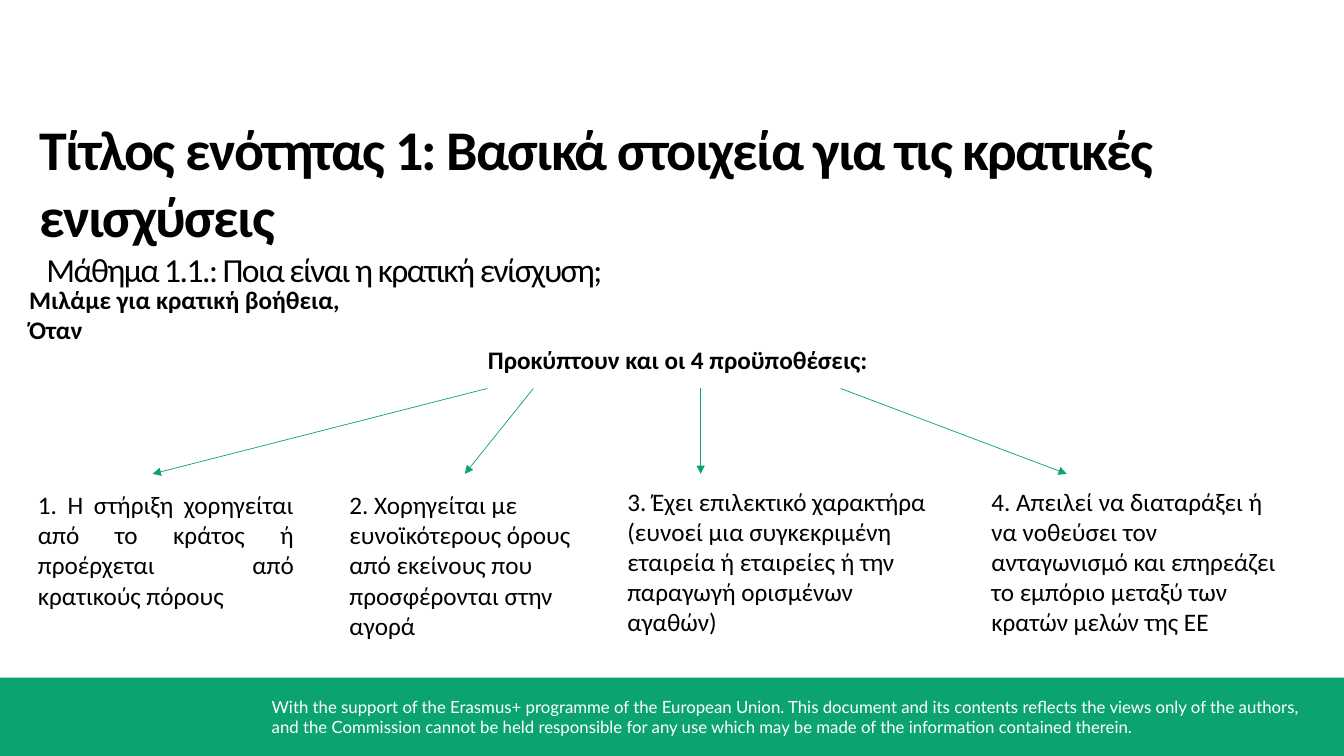
import pptx
import pptx.dml.color
import pptx.enum.shapes
import pptx.enum.text
import pptx.oxml
import pptx.oxml.ns
import pptx.util

COLOURS = {"green": "0CA373", "black": "000000", "white": "FFFFFF"}
ALIGN = pptx.enum.text.PP_ALIGN


class SlideBuilder:
    """Draws styled elements on one slide, with lengths in points."""

    def __init__(self, slide, font_name):
        self.slide = slide
        self.font_name = font_name

    def colour(self, name):
        return pptx.dml.color.RGBColor.from_string(COLOURS[name])

    def lengths(self, *values):
        return [pptx.util.Pt(value) for value in values]

    def band(self, left, top, width, height):
        shape = self.slide.shapes.add_shape(
            pptx.enum.shapes.MSO_SHAPE.RECTANGLE, *self.lengths(left, top, width, height))
        shape.shadow.inherit = False
        shape.fill.solid()
        shape.fill.fore_color.rgb = self.colour("green")
        shape.line.fill.background()

    def text_box(self, left, top, width, height):
        shape = self.slide.shapes.add_textbox(*self.lengths(left, top, width, height))
        shape.text_frame.word_wrap = True
        return shape.text_frame

    def add_text(self, frame, text, size=18, bold=False, align=ALIGN.LEFT,
                 colour="black", font_name=None, indent=0, spacing=0):
        paragraph = frame.paragraphs[0]
        if paragraph.runs:
            paragraph = frame.add_paragraph()
        paragraph.add_run().text = text
        paragraph.alignment = align
        if indent:
            paragraph._p.get_or_add_pPr().set("marL", str(pptx.util.Pt(indent)))
        font = paragraph.font
        font.name = font_name or self.font_name
        font.size = pptx.util.Pt(size)
        font.bold = bold
        font.color.rgb = self.colour(colour)
        if spacing:
            font._rPr.set("spc", str(round(spacing * 100)))

    def arrow(self, *ends):
        connector = self.slide.shapes.add_connector(
            pptx.enum.shapes.MSO_CONNECTOR.STRAIGHT, *self.lengths(*ends))
        connector.line.color.rgb = self.colour("green")
        connector.line.width = pptx.util.Pt(0.5)
        namespace = pptx.oxml.ns.nsdecls("a")
        line = connector.line._get_or_add_ln()
        line.append(pptx.oxml.parse_xml(f'<a:tailEnd {namespace} type="triangle"/>'))
        connector._element.spPr.append(pptx.oxml.parse_xml(f"<a:effectLst {namespace}/>"))


def main():
    presentation = pptx.Presentation()
    presentation.slide_width = pptx.util.Pt(960)
    presentation.slide_height = pptx.util.Pt(540)
    slide = presentation.slides.add_slide(presentation.slide_layouts[6])
    builder = SlideBuilder(slide, "Calibri")

    builder.band(0, 484, 960, 56)
    footer = builder.text_box(187, 494, 750, 36)
    builder.add_text(
        footer,
        "With the support of the Erasmus+ programme of the European Union. "
        "This document and its contents reflects the views only of the authors, "
        "and the Commission cannot be held responsible for any use which may be "
        "made of the information contained therein.",
        size=12, colour="white", font_name="Lato")

    title = builder.text_box(20, 78, 852, 134)
    builder.add_text(title, "Τίτλος ενότητας 1: Βασικά στοιχεία για τις κρατικές ενισχύσεις",
                     size=40, bold=True, indent=1, spacing=-1.1)
    builder.add_text(title, "Μάθημα 1.1.: Ποια είναι η κρατική ενίσχυση;",
                     size=24, indent=6, spacing=-1.1)

    introduction = builder.text_box(13.7, 199.5, 941, 74)
    for text, align in (
        ("Μιλάμε για κρατική βοήθεια,", ALIGN.LEFT),
        ("Όταν", ALIGN.LEFT),
        ("Προκύπτουν και οι 4 προϋποθέσεις:", ALIGN.CENTER),
    ):
        builder.add_text(introduction, text, bold=True, align=align)

    conditions = (
        (20, 346, 197, ALIGN.JUSTIFY,
         "1. Η στήριξη χορηγείται από το κράτος ή προέρχεται από κρατικούς πόρους"),
        (242.5, 346, 204, ALIGN.LEFT,
         "2. Χορηγείται με ευνοϊκότερους όρους από εκείνους που προσφέρονται στην αγορά"),
        (441, 343.5, 227.5, ALIGN.LEFT,
         "3. Έχει επιλεκτικό χαρακτήρα (ευνοεί μια συγκεκριμένη εταιρεία ή εταιρείες "
         "ή την παραγωγή ορισμένων αγαθών)"),
        (701, 343.5, 227.5, ALIGN.LEFT,
         "4. Απειλεί να διαταράξει ή να νοθεύσει τον ανταγωνισμό και επηρεάζει "
         "το εμπόριο μεταξύ των κρατών μελών της ΕΕ"),
    )
    for left, top, width, align, text in conditions:
        builder.add_text(builder.text_box(left, top, width, 117), text, align=align)

    for start, end in ((348, 109), (381, 332), (500.5, 500.5), (600.5, 762)):
        builder.arrow(start, 277.5, end, 338.5)

    presentation.save("out.pptx")


if __name__ == "__main__":
    main()
